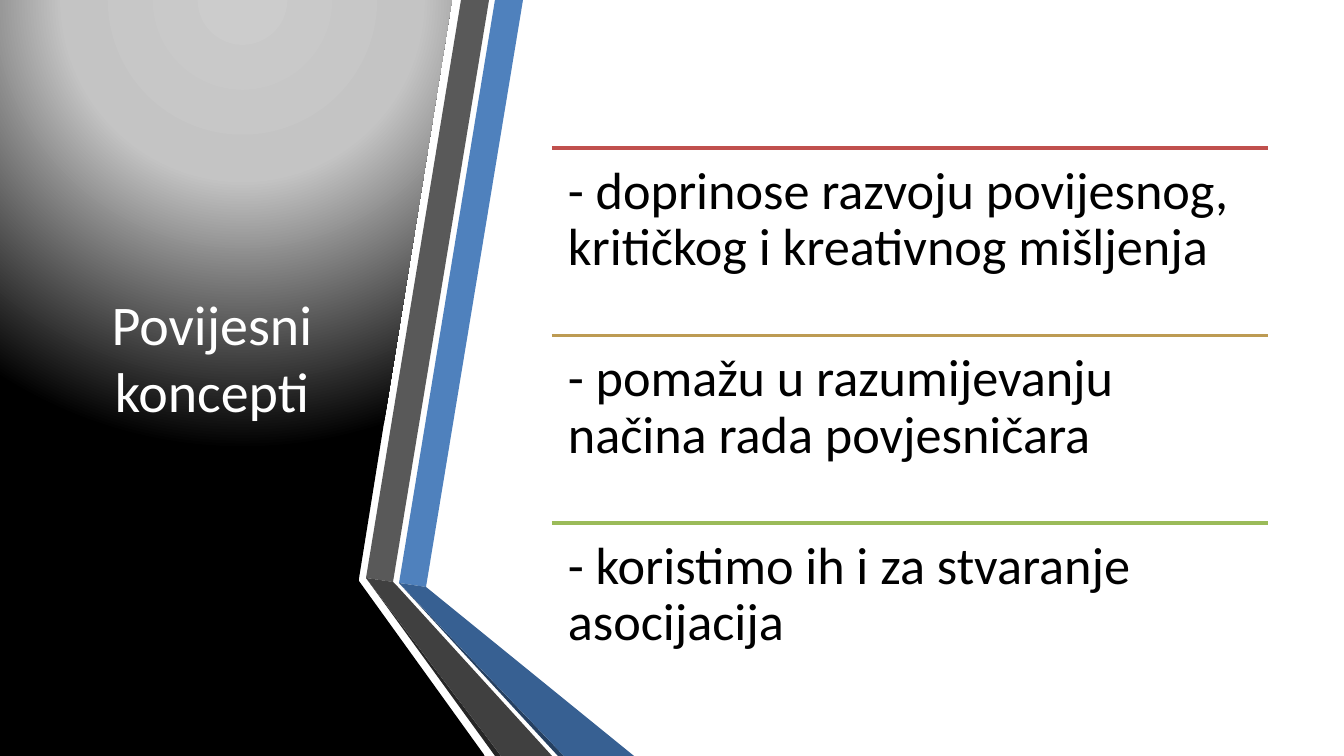
from dataclasses import dataclass
from pptx import Presentation
from pptx.dml.color import RGBColor
from pptx.enum.shapes import MSO_CONNECTOR
from pptx.enum.text import MSO_ANCHOR, PP_ALIGN
from pptx.oxml import parse_xml
from pptx.oxml.ns import nsdecls, qn
from pptx.util import Emu, Pt

PX = 9144000 / 1344


@dataclass(frozen=True)
class Theme:
    """Colours and type sizes of the slide."""
    font: str = "Calibri"
    title_size: int = 30
    point_size: int = 28
    rule_width: int = 2
    title: str = "FFFFFF"
    text: str = "000000"
    glow: tuple = ((0, "CCCCCC"), (40, "C4C4C4"), (100, "000000"))
    rules: tuple = ("C0504D", "BD9B53", "9BBB59")
    blue: str = "4F81BD"
    blue_fold: str = "376092"
    blue_edge: str = "254061"
    grey: str = "595959"
    grey_fold: str = "404040"
    grey_edge: str = "262626"


THEME = Theme()

PANEL = [(0, 0), (452, 0), (359, 579), (359, 581), (485, 756), (0, 756)]
RIBBONS = [
    (THEME.blue, [(33, 583), (60, 587), (157, 0), (129, 0)]),
    (THEME.grey, [(123, 0), (95, 0), (0, 578), (27, 582)]),
    (THEME.grey_edge, [(0, 578), (129, 756), (135, 756)]),
    (THEME.blue_edge, [(33, 583), (192, 756), (198, 756)]),
    (THEME.blue_fold, [(33, 583), (198, 756), (268, 756), (60, 587)]),
    (THEME.grey_fold, [(186, 756), (32, 587), (27, 582), (0, 578), (135, 756)]),
]
POINTS = [
    "- doprinose razvoju povijesnog, kritičkog i kreativnog mišljenja",
    "- pomažu u razumijevanju načina rada povjesničara",
    "- koristimo ih i za stvaranje asocijacija",
]


def px(length):
    """Turn px into EMU."""
    return Emu(round(length * PX))


def add_outline(slide, left, top, corners):
    """Draw a closed, borderless outline offset from left and top."""
    builder = slide.shapes.build_freeform(*corners[0], scale=PX)
    builder.add_line_segments(corners[1:], close=True)
    outline = builder.convert_to_shape(px(left), px(top))
    outline.shadow.inherit = False
    outline.line.fill.background()
    return outline


def add_text(slide, box, words, size, colour):
    """Add a wrapped text box and return its frame and paragraph."""
    frame = slide.shapes.add_textbox(*map(px, box)).text_frame
    frame.word_wrap = True
    paragraph = frame.paragraphs[0]
    paragraph.text = words
    paragraph.font.name = THEME.font
    paragraph.font.size = Pt(size)
    paragraph.font.color.rgb = RGBColor.from_string(colour)
    return frame, paragraph


def add_panel(slide, left, top):
    """Draw the dark side panel with its round glow."""
    panel = add_outline(slide, left, top, PANEL)
    panel.fill.background()
    stops = "".join(
        f'<a:gs pos="{place * 1000}"><a:srgbClr val="{colour}"/></a:gs>'
        for place, colour in THEME.glow
    )
    glow = parse_xml(
        f'<a:gradFill {nsdecls("a")} rotWithShape="1"><a:gsLst>{stops}</a:gsLst>'
        '<a:path path="circle"><a:fillToRect l="50000" t="-80000" r="50000" '
        'b="180000"/></a:path></a:gradFill>'
    )
    properties = panel.element.spPr
    properties.replace(properties.find(qn("a:noFill")), glow)


def add_ribbons(slide, left, top):
    """Draw the two folded ribbons beside the panel."""
    for colour, corners in RIBBONS:
        ribbon = add_outline(slide, left, top, corners)
        ribbon.fill.solid()
        ribbon.fill.fore_color.rgb = RGBColor.from_string(colour)


def add_title(slide, left, top, width, height):
    """Centre the title in its box."""
    frame, heading = add_text(
        slide, (left, top, width, height), "Povijesni koncepti",
        THEME.title_size, THEME.title,
    )
    frame.vertical_anchor = MSO_ANCHOR.MIDDLE
    heading.alignment = PP_ALIGN.CENTER


def add_points(slide, left, top, width, height):
    """Stack the points in equal rows, each under a coloured rule."""
    row_height = height / len(POINTS)
    inset = px(16)
    for row, (words, colour) in enumerate(zip(POINTS, THEME.rules)):
        y = top + row * row_height
        rule = slide.shapes.add_connector(
            MSO_CONNECTOR.STRAIGHT, px(left), px(y), px(left + width), px(y)
        )
        rule.line.color.rgb = RGBColor.from_string(colour)
        rule.line.width = Pt(THEME.rule_width)
        rule.element.spPr.append(parse_xml(f'<a:effectLst {nsdecls("a")}/>'))
        frame, point = add_text(
            slide, (left, y, width, row_height), words,
            THEME.point_size, THEME.text,
        )
        frame.margin_left = frame.margin_right = inset
        frame.margin_top = frame.margin_bottom = inset
        point.line_spacing = 0.9


def main():
    """Build and save the slide."""
    deck = Presentation()
    deck.slide_width, deck.slide_height = px(1344), px(756)
    slide = deck.slides.add_slide(deck.slide_layouts[6])
    add_panel(slide, 0, 0)
    add_ribbons(slide, 366, 0)
    add_title(slide, 59, 75, 306, 563)
    add_points(slide, 552, 148, 716, 563)
    deck.save("out.pptx")


if __name__ == "__main__":
    main()
